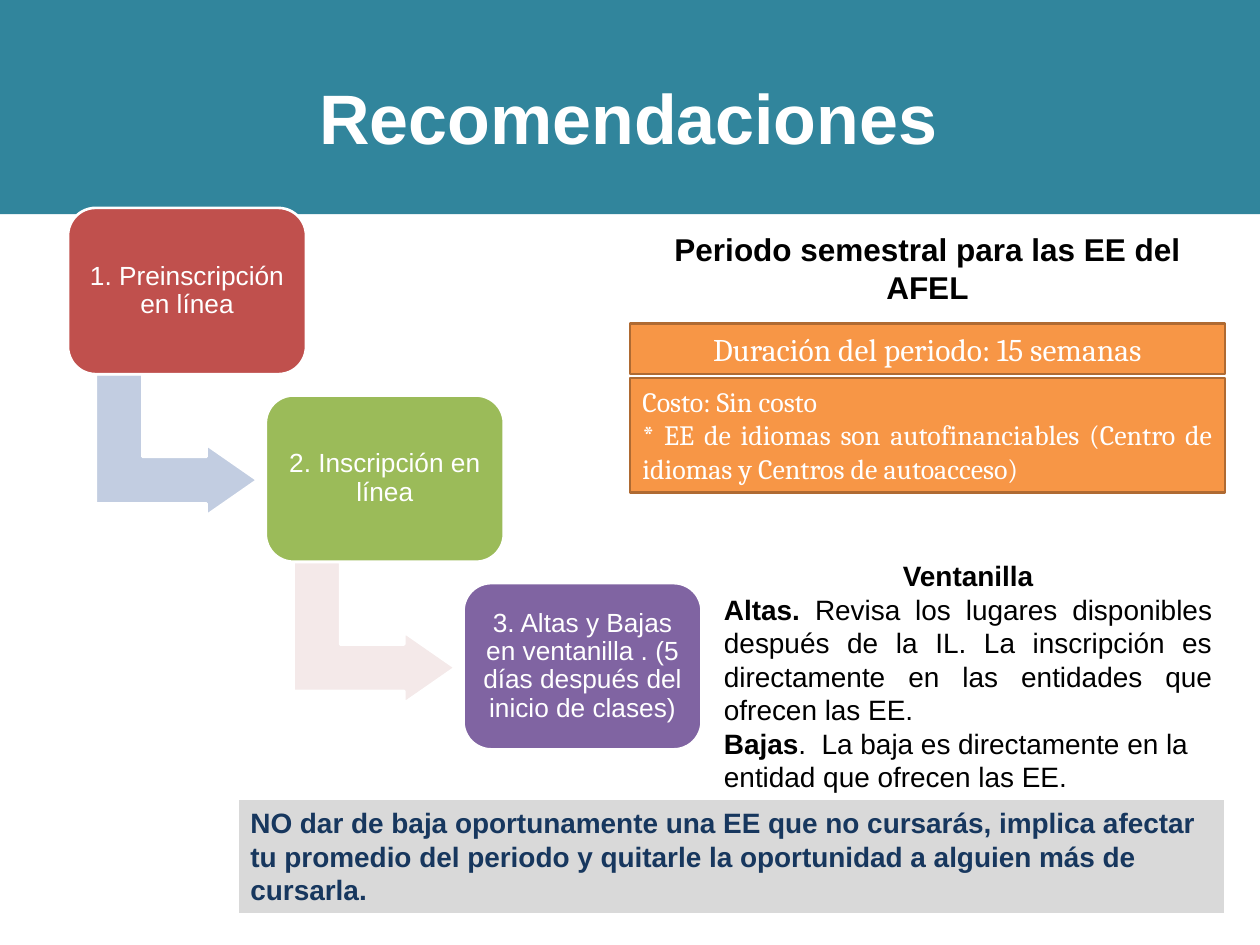
from pptx import Presentation
from pptx.dml.color import RGBColor
from pptx.enum.shapes import MSO_SHAPE
from pptx.enum.text import MSO_ANCHOR, PP_ALIGN
from pptx.util import Pt

WHITE = RGBColor(0xFF, 0xFF, 0xFF)
BLACK = RGBColor(0, 0, 0)
TEAL = RGBColor(0x31, 0x85, 0x9C)
RED = RGBColor(0xC0, 0x50, 0x4D)
GREEN = RGBColor(0x9B, 0xBB, 0x59)
PURPLE = RGBColor(0x80, 0x64, 0xA2)
PALE_BLUE = RGBColor(0xC2, 0xCD, 0xE1)
PALE_PINK = RGBColor(0xF4, 0xE9, 0xE9)
ORANGE = RGBColor(0xF7, 0x96, 0x46)
BROWN = RGBColor(0xAF, 0x6A, 0x32)
GRAY = RGBColor(0xD9, 0xD9, 0xD9)
NAVY = RGBColor(0x17, 0x37, 0x5E)

LEFT, CENTER, JUSTIFY = PP_ALIGN.LEFT, PP_ALIGN.CENTER, PP_ALIGN.JUSTIFY

TITLE = "Recomendaciones"
STEPS = [
    ("1. Preinscripción en línea", RED, PALE_BLUE),
    ("2. Inscripción en línea", GREEN, PALE_PINK),
    ("3. Altas y Bajas en ventanilla . (5 días después del inicio de clases)", PURPLE, None),
]
PERIOD = "Periodo semestral para las EE del AFEL"
DURATION = "Duración del periodo: 15 semanas"
COST = [
    (JUSTIFY, [("Costo: Sin costo", False)]),
    (JUSTIFY, [("* EE de idiomas son autofinanciables (Centro de idiomas y Centros de autoacceso)", False)]),
]
WINDOW = [
    (CENTER, [("Ventanilla", True)]),
    (JUSTIFY, [("Altas. ", True),
               ("Revisa los lugares disponibles después de la IL. La inscripción es "
                "directamente en las entidades que ofrecen las EE.", False)]),
    (LEFT, [("Bajas", True),
            (".  La baja es directamente en la entidad que ofrecen las EE.", False)]),
]
WARNING = ("NO dar de baja oportunamente una EE que no cursarás, implica afectar tu promedio "
           "del periodo y quitarle la oportunidad a alguien más de cursarla.")

STEP_LEFT, STEP_TOP, STEP_WIDTH, STEP_HEIGHT = 38.9, 118.8, 136, 95
STEP_RIGHT, STEP_DOWN = 113, 107.2
ARROW_DX, ARROW_DY, ARROW_WIDTH, ARROW_HEIGHT = 21.7, 89.3, 80.6, 92.2
PANEL_LEFT, PANEL_WIDTH = 360, 340


def write(box, content, *, size, color, font="Arial", bold=False, align=LEFT,
          anchor=MSO_ANCHOR.TOP, inset=None, spacing=None):
    paragraphs = [(align, [(content, bold)])] if isinstance(content, str) else content
    frame = box.text_frame
    frame.word_wrap = True
    frame.vertical_anchor = anchor
    if inset is not None:
        frame.margin_left = frame.margin_right = Pt(inset)
        frame.margin_top = frame.margin_bottom = Pt(inset)
    for index, (alignment, spans) in enumerate(paragraphs):
        para = frame.add_paragraph() if index else frame.paragraphs[0]
        para.alignment = alignment
        if spacing:
            para.line_spacing = spacing
        for text, strong in spans:
            span = para.add_run()
            span.text = text
            span.font.name = font
            span.font.size = Pt(size)
            span.font.bold = strong
            span.font.color.rgb = color


def add_box(page, kind, bounds, fill, line=None, weight=1.5):
    box = page.shapes.add_shape(kind, *map(Pt, bounds))
    box.shadow.inherit = False
    box.fill.solid()
    box.fill.fore_color.rgb = fill
    if line is None:
        box.line.fill.background()
    else:
        box.line.color.rgb = line
        box.line.width = Pt(weight)
    return box


def add_steps(page):
    for index, (text, fill, arrow_fill) in enumerate(STEPS):
        left = STEP_LEFT + index * STEP_RIGHT
        top = STEP_TOP + index * STEP_DOWN
        if arrow_fill is not None:
            bounds = (left + ARROW_DX, top + ARROW_DY, ARROW_WIDTH, ARROW_HEIGHT)
            arrow = add_box(page, MSO_SHAPE.BENT_UP_ARROW, bounds, arrow_fill, WHITE)
            arrow.rotation = 90
            for position, value in enumerate((0.33, 0.25, 0.36)):
                arrow.adjustments[position] = value
        step = add_box(page, MSO_SHAPE.ROUNDED_RECTANGLE,
                       (left, top, STEP_WIDTH, STEP_HEIGHT), fill, WHITE)
        write(step, text, size=15, color=WHITE, align=CENTER, anchor=MSO_ANCHOR.MIDDLE,
              inset=4.5, spacing=0.9)


def add_panel(page):
    period = page.shapes.add_textbox(Pt(PANEL_LEFT), Pt(128), Pt(PANEL_WIDTH), Pt(51))
    write(period, PERIOD, size=18, color=BLACK, bold=True, align=CENTER)
    for content, top, height, size in ((DURATION, 184.8, 29, 18), (COST, 216, 65.4, 16)):
        box = add_box(page, MSO_SHAPE.RECTANGLE,
                      (PANEL_LEFT, top, PANEL_WIDTH, height), ORANGE, BROWN)
        write(box, content, size=size, color=WHITE, font="Cambria", align=CENTER)
    window = page.shapes.add_textbox(Pt(406.6), Pt(315.6), Pt(293.2), Pt(143))
    write(window, WINDOW, size=16, color=BLACK)
    warning = add_box(page, MSO_SHAPE.RECTANGLE, (136, 456.8, 564, 65.4), GRAY, WHITE, 0.75)
    write(warning, WARNING, size=16, color=NAVY, bold=True)


def main():
    deck = Presentation()
    deck.slide_width, deck.slide_height = Pt(720), Pt(540)
    page = deck.slides.add_slide(deck.slide_layouts[5])
    title = page.shapes.title
    title.left, title.top, title.width, title.height = map(Pt, (42.5, 9.4, 633, 113.8))
    write(title, TITLE, size=40, color=WHITE, bold=True, align=CENTER, anchor=MSO_ANCHOR.MIDDLE)
    banner = add_box(page, MSO_SHAPE.RECTANGLE, (0, 0, 720, 122.4), TEAL)
    title.element.addprevious(banner.element)
    add_steps(page)
    add_panel(page)
    deck.save("out.pptx")


if __name__ == "__main__":
    main()
